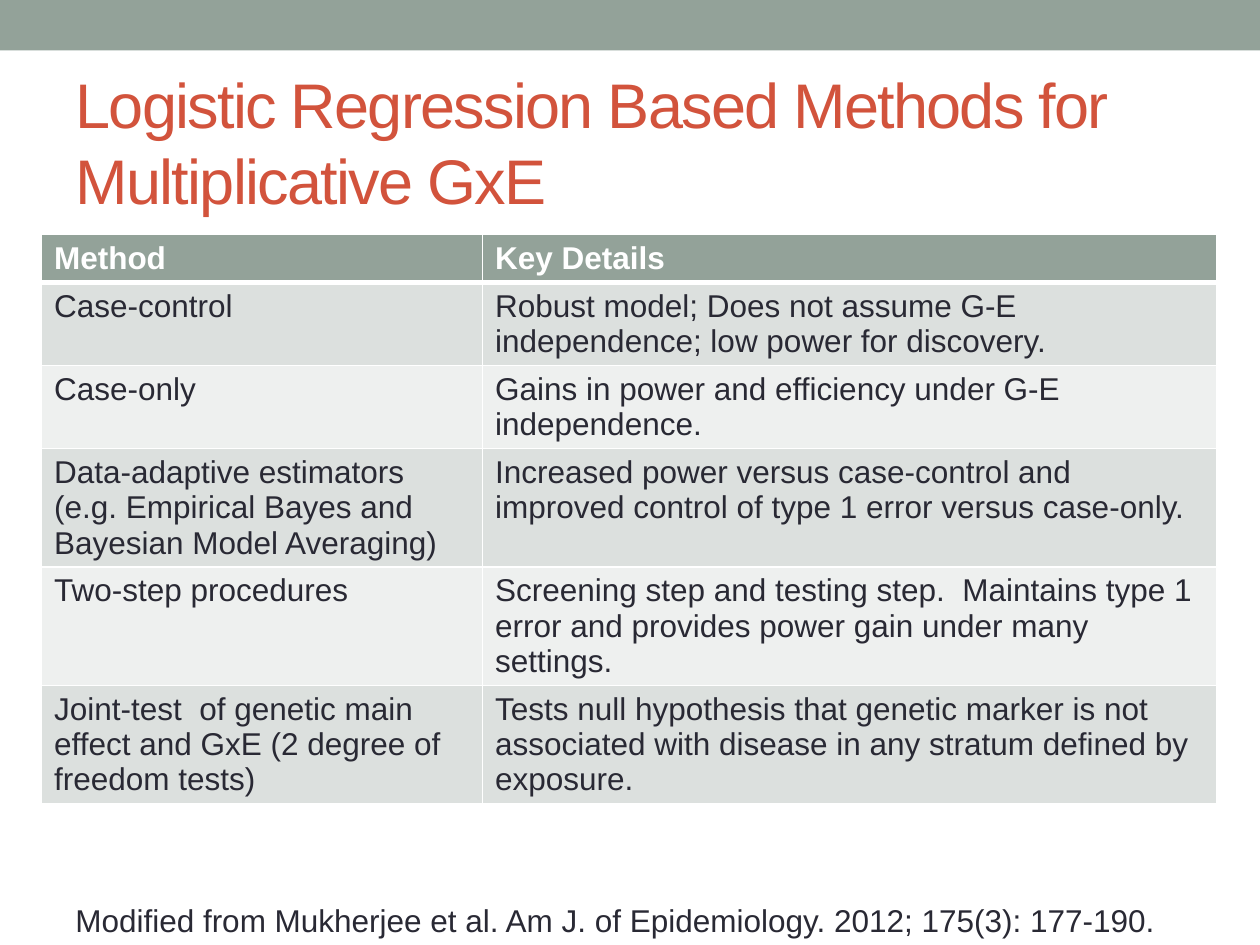
from lxml import etree
from pptx import Presentation
from pptx.dml.color import RGBColor
from pptx.enum.shapes import MSO_SHAPE
from pptx.enum.text import MSO_ANCHOR, MSO_AUTO_SIZE, PP_ALIGN
from pptx.oxml.ns import qn
from pptx.util import Inches, Pt

RECTANGLE = MSO_SHAPE.RECTANGLE
MIDDLE = MSO_ANCHOR.MIDDLE
NO_FIT = MSO_AUTO_SIZE.NONE
GROW = MSO_AUTO_SIZE.SHAPE_TO_FIT_TEXT
LEFT = PP_ALIGN.LEFT
WIDTH, HEIGHT = 10, 7.5
MARGIN = 0.5
FONT = "Arial"
SAGE, RUST, INK, WHITE = "93A299", "D2533C", "292934", "FFFFFF"
BANDS = ("DCE0DE", "EEF0EF")

TITLE = "Logistic Regression Based Methods for Multiplicative GxE"
CITATION = "Modified from Mukherjee et al. Am J. of Epidemiology. 2012; 175(3): 177-190."
COLUMN_WIDTHS = (3.5, 5.83)
LINE_HEIGHT, CELL_PADDING = 0.28, 0.1
METHODS = [
    (1, "Method", "Key Details"),
    (2, "Case-control",
     "Robust model; Does not assume G-E independence; low power for discovery."),
    (2, "Case-only", "Gains in power and efficiency under G-E independence."),
    (3, "Data-adaptive estimators (e.g. Empirical Bayes and Bayesian Model Averaging)",
     "Increased power versus case-control and improved control of type 1 error versus case-only."),
    (3, "Two-step procedures",
     "Screening step and testing step.  Maintains type 1 error and provides power gain "
     "under many settings."),
    (3, "Joint-test  of genetic main effect and GxE (2 degree of freedom tests)",
     "Tests null hypothesis that genetic marker is not associated with disease in any "
     "stratum defined by exposure."),
]


def paint(target, color):
    target.solid()
    target.fore_color.rgb = RGBColor.from_string(color)


def write(frame, text, size=18, color=INK, bold=False, spacing=None):
    frame.word_wrap = True
    para = frame.paragraphs[0]
    para.alignment = LEFT
    span = para.add_run()
    span.text = text
    span.font.name = FONT
    span.font.size = Pt(size)
    span.font.bold = bold
    span.font.color.rgb = RGBColor.from_string(color)
    if spacing is not None:
        span.font._element.set("spc", str(spacing * 100))


def add_band(page):
    band = page.shapes.add_shape(RECTANGLE, 0, 0, Inches(WIDTH), Inches(0.4))
    band.shadow.inherit = False
    paint(band.fill, SAGE)
    band.line.fill.background()


def place_title(page):
    title = page.shapes.title
    title.left, title.top = Inches(MARGIN), Inches(0.58)
    title.width, title.height = Inches(WIDTH - 2 * MARGIN), Inches(1.08)
    title.text_frame.auto_size = NO_FIT
    title.text_frame.vertical_anchor = MIDDLE
    write(title.text_frame, TITLE, size=36, color=RUST, spacing=-1)


def add_borders(cell, **widths):
    properties = cell._tc.get_or_add_tcPr()
    for index, (side, width) in enumerate(widths.items()):
        line = etree.Element(qn(f"a:ln{side}"), w=str(Pt(width)))
        fill = etree.SubElement(line, qn("a:solidFill"))
        etree.SubElement(fill, qn("a:srgbClr"), val=WHITE)
        properties.insert(index, line)


def add_methods_table(page):
    heights = [lines * LINE_HEIGHT + CELL_PADDING for lines, *_ in METHODS]
    frame = page.shapes.add_table(
        len(METHODS), len(COLUMN_WIDTHS), Inches(0.33), Inches(1.86),
        Inches(sum(COLUMN_WIDTHS)), Inches(sum(heights)))
    table = frame.table
    for column, width in zip(table.columns, COLUMN_WIDTHS):
        column.width = Inches(width)
    for index, (_, *texts) in enumerate(METHODS):
        table.rows[index].height = Inches(heights[index])
        header = index == 0
        for cell, text in zip(table.rows[index].cells, texts):
            paint(cell.fill, SAGE if header else BANDS[(index - 1) % 2])
            write(cell.text_frame, text, color=WHITE if header else INK, bold=header)
            add_borders(cell, L=1, R=1, T=3 if index == 1 else 1, B=3 if header else 1)


def add_citation(page):
    box = page.shapes.add_textbox(
        Inches(MARGIN), Inches(7.1), Inches(WIDTH - 2 * MARGIN), Inches(0.4))
    box.text_frame.auto_size = GROW
    write(box.text_frame, CITATION)


def main():
    deck = Presentation()
    deck.slide_width, deck.slide_height = Inches(WIDTH), Inches(HEIGHT)
    page = deck.slides.add_slide(deck.slide_layouts[5])
    paint(page.background.fill, WHITE)
    add_band(page)
    place_title(page)
    add_methods_table(page)
    add_citation(page)
    deck.save("out.pptx")


if __name__ == "__main__":
    main()
